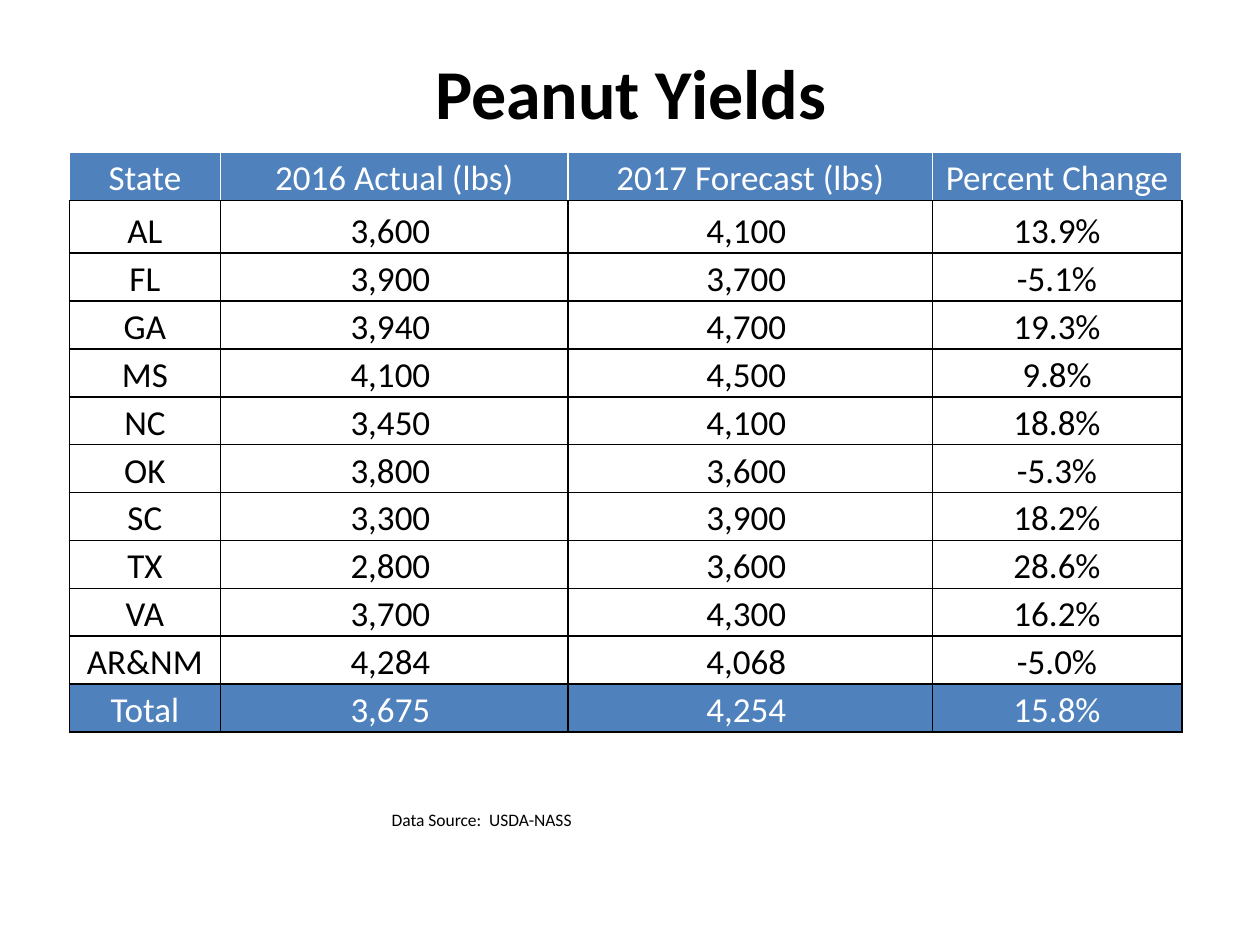
from lxml import etree
from pptx import Presentation
from pptx.dml.color import RGBColor
from pptx.enum.text import MSO_ANCHOR, MSO_AUTO_SIZE, PP_ALIGN
from pptx.oxml.ns import qn
from pptx.util import Inches, Pt

FONT = "Calibri"
BLUE = RGBColor(0x4F, 0x81, 0xBD)
WHITE = RGBColor(0xFF, 0xFF, 0xFF)
BLACK = RGBColor(0, 0, 0)

HEADERS = ("State", "2016 Actual (lbs)", "2017 Forecast (lbs)", "Percent Change")
YIELDS = (
    ("AL", 3600, 4100, 13.9),
    ("FL", 3900, 3700, -5.1),
    ("GA", 3940, 4700, 19.3),
    ("MS", 4100, 4500, 9.8),
    ("NC", 3450, 4100, 18.8),
    ("OK", 3800, 3600, -5.3),
    ("SC", 3300, 3900, 18.2),
    ("TX", 2800, 3600, 28.6),
    ("VA", 3700, 4300, 16.2),
    ("AR&NM", 4284, 4068, -5.0),
    ("Total", 3675, 4254, 15.8),
)
COL_WIDTHS = (1.2, 2.76, 2.89, 1.98)
ROW_HEIGHT, FIRST_STATE_HEIGHT = 0.38, 0.42


def set_font(p, size, color, bold=False):
    p.font.name, p.font.size, p.font.bold = FONT, Pt(size), bold
    p.font.color.rgb = color


def set_borders(cell, colors):
    """Draw 1 pt borders; colors run left, right, top, bottom."""
    tcPr = cell._tc.get_or_add_tcPr()
    for i, (side, color) in enumerate(zip("LRTB", colors)):
        ln = etree.Element(qn(f"a:ln{side}"), w=str(Pt(1)))
        fill = etree.SubElement(ln, qn("a:solidFill"))
        etree.SubElement(fill, qn("a:srgbClr"), val=str(color))
        tcPr.insert(i, ln)


def add_title(s, left, top, width, height):
    title = s.shapes.title
    title.left, title.top, title.width, title.height = left, top, width, height
    tf = title.text_frame
    tf.text = "Peanut Yields"
    tf.auto_size = MSO_AUTO_SIZE.NONE
    tf.vertical_anchor = MSO_ANCHOR.TOP
    p = tf.paragraphs[0]
    p.alignment = PP_ALIGN.CENTER
    set_font(p, 40, BLACK, bold=True)


def format_cell(cell, text, fill, color, borders):
    cell.margin_left = cell.margin_right = cell.margin_top = Inches(0.01)
    cell.margin_bottom = 0
    cell.vertical_anchor = MSO_ANCHOR.BOTTOM
    cell.fill.solid()
    cell.fill.fore_color.rgb = fill
    set_borders(cell, borders)
    cell.text = text
    p = cell.text_frame.paragraphs[0]
    p.alignment = PP_ALIGN.CENTER
    set_font(p, 20, color)


def add_yield_table(s, left, top, width, height):
    rows = [HEADERS] + [
        (state, f"{actual:,} ", f"{forecast:,} ", f"{change:.1f}%")
        for state, actual, forecast, change in YIELDS
    ]
    table = s.shapes.add_table(len(rows), len(HEADERS), left, top, width, height).table
    for column, col_width in zip(table.columns, COL_WIDTHS):
        column.width = Inches(col_width)
    for i, values in enumerate(rows):
        table.rows[i].height = Inches(FIRST_STATE_HEIGHT if i == 1 else ROW_HEIGHT)
        # Header and total rows are blue; only the header has white borders
        banner = i in (0, len(rows) - 1)
        fill, color = (BLUE, WHITE) if banner else (WHITE, BLACK)
        borders = (WHITE, WHITE, WHITE, BLACK) if i == 0 else (BLACK,) * 4
        for j, text in enumerate(values):
            format_cell(table.cell(i, j), text, fill, color, borders)


def add_source_note(s, left, top, width, height):
    tf = s.shapes.add_textbox(left, top, width, height).text_frame
    tf.word_wrap = True
    tf.text = "Data Source:  USDA-NASS"
    set_font(tf.paragraphs[0], 10, BLACK)


def main():
    prs = Presentation()
    prs.slide_width, prs.slide_height = Inches(10), Inches(7.5)
    s = prs.slides.add_slide(prs.slide_layouts[5])
    add_source_note(s, Inches(3.01), Inches(6.37), Inches(4.3), Inches(0.27))
    add_title(s, Inches(0.42), Inches(0.34), Inches(9.17), Inches(0.67))
    add_yield_table(s, Inches(0.55), Inches(1.21), Inches(8.83), Inches(4.62))
    prs.save("out.pptx")


if __name__ == "__main__":
    main()
